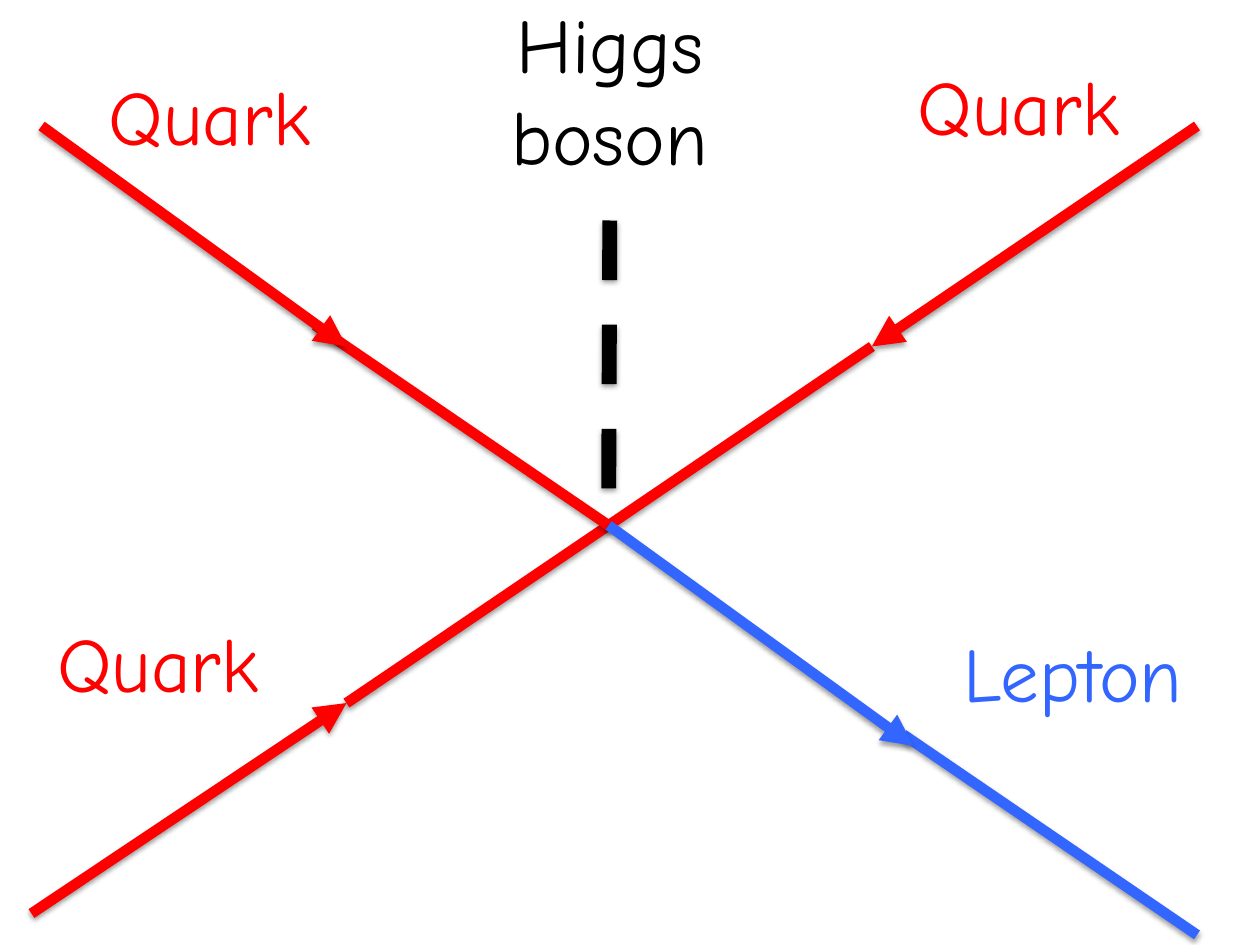
from lxml import etree
from pptx import Presentation
from pptx.dml.color import RGBColor
from pptx.enum.dml import MSO_LINE
from pptx.enum.shapes import MSO_CONNECTOR
from pptx.enum.text import MSO_ANCHOR, MSO_AUTO_SIZE, PP_ALIGN
from pptx.oxml.ns import qn
from pptx.util import Inches, Pt

STRAIGHT = MSO_CONNECTOR.STRAIGHT
DASH = MSO_LINE.DASH
TOP, BOTTOM = MSO_ANCHOR.TOP, MSO_ANCHOR.BOTTOM
CENTER = PP_ALIGN.CENTER
FIT_SHAPE = MSO_AUTO_SIZE.SHAPE_TO_FIT_TEXT

RED = RGBColor(0xFF, 0x00, 0x00)
BLUE = RGBColor(0x33, 0x66, 0xFF)
BLACK = RGBColor(0x00, 0x00, 0x00)

VERTEX = (4.83, 4.17)

QUARKS = {
    "lower left": dict(
        box=(0, VERTEX[1]), name="Quark", color=RED,
        label=(0.25, 0.66, 2.01, 0.84),
        incoming=((0.25, 3.08), (2.75, 1.41)),
        plain=((2.75, 1.41), (4.83, 0))),
    "upper right": dict(
        box=(VERTEX[0], 0), name="Quark", color=RED,
        label=(2.25, 0.41, 2.01, 0.84),
        incoming=((4.67, 1), (2.09, 2.75)),
        plain=((0, 4.17), (2.09, 2.75))),
    "upper left": dict(
        box=(0, 0), name="Quark", color=RED,
        label=(0.66, 0.49, 2.01, 0.84),
        incoming=((0.33, 1), (2.75, 2.75)),
        plain=((4.83, 4.17), (2.5, 2.58))),
}
LEPTON = dict(
    box=VERTEX, name="Lepton", color=BLUE,
    label=(2.61, 0.74, 2.15, 0.84),
    incoming=((0, 0), (2.42, 1.75)),
    plain=((4.67, 3.25), (2.34, 1.66)))


def add_shadow(line):
    effects = etree.SubElement(line._element.spPr, qn("a:effectLst"))
    shadow = etree.SubElement(
        effects, qn("a:outerShdw"), blurRad=str(Pt(3.1)), dist=str(Pt(1.6)),
        dir="5400000", rotWithShape="0")
    color = etree.SubElement(shadow, qn("a:srgbClr"), val="000000")
    etree.SubElement(color, qn("a:alpha"), val="38000")


def add_line(page, box, ends, color, width=6, dash=None, arrow=False):
    left, top = box
    points = [Inches(value) for x, y in ends for value in (left + x, top + y)]
    line = page.shapes.add_connector(STRAIGHT, *points)
    line.line.color.rgb = color
    line.line.width = Pt(width)
    if dash:
        line.line.dash_style = dash
    if arrow:
        etree.SubElement(line.line._get_or_add_ln(), qn("a:tailEnd"), type="triangle")
    add_shadow(line)


def add_label(page, box, area, lines, color, anchor):
    x, y, width, height = area
    label = page.shapes.add_textbox(
        Inches(box[0] + x), Inches(box[1] + y), Inches(width), Inches(height))
    frame = label.text_frame
    frame_format = dict(word_wrap=False, auto_size=FIT_SHAPE, vertical_anchor=anchor)
    for key, value in frame_format.items():
        setattr(frame, key, value)
    for number, line in enumerate(lines):
        para = frame.add_paragraph() if number else frame.paragraphs[0]
        para.alignment = CENTER
        span = para.add_run()
        span.text = line
        for key, value in dict(name="Comic Neue", size=Pt(44)).items():
            setattr(span.font, key, value)
        span.font.color.rgb = color


def draw_particle(page, box, name, color, label, incoming, plain):
    add_line(page, box, plain, color)
    add_line(page, box, incoming, color, arrow=True)
    add_label(page, box, label, [name], color, BOTTOM)


def draw_boson(page, box):
    add_label(page, box, (0, 0, 1.84, 1.58), ["Higgs", "boson"], BLACK, TOP)
    add_line(page, box, ((0.92, 1.83), (0.91, 4.25)), BLACK, width=8.5, dash=DASH)


def main():
    deck = Presentation()
    deck.slide_width, deck.slide_height = Inches(10), Inches(7.5)
    page = deck.slides.add_slide(deck.slide_layouts[6])
    for quark in QUARKS.values():
        draw_particle(page, **quark)
    draw_particle(page, **LEPTON)
    draw_boson(page, (3.92, -0.08))
    deck.save("out.pptx")


if __name__ == "__main__":
    main()
